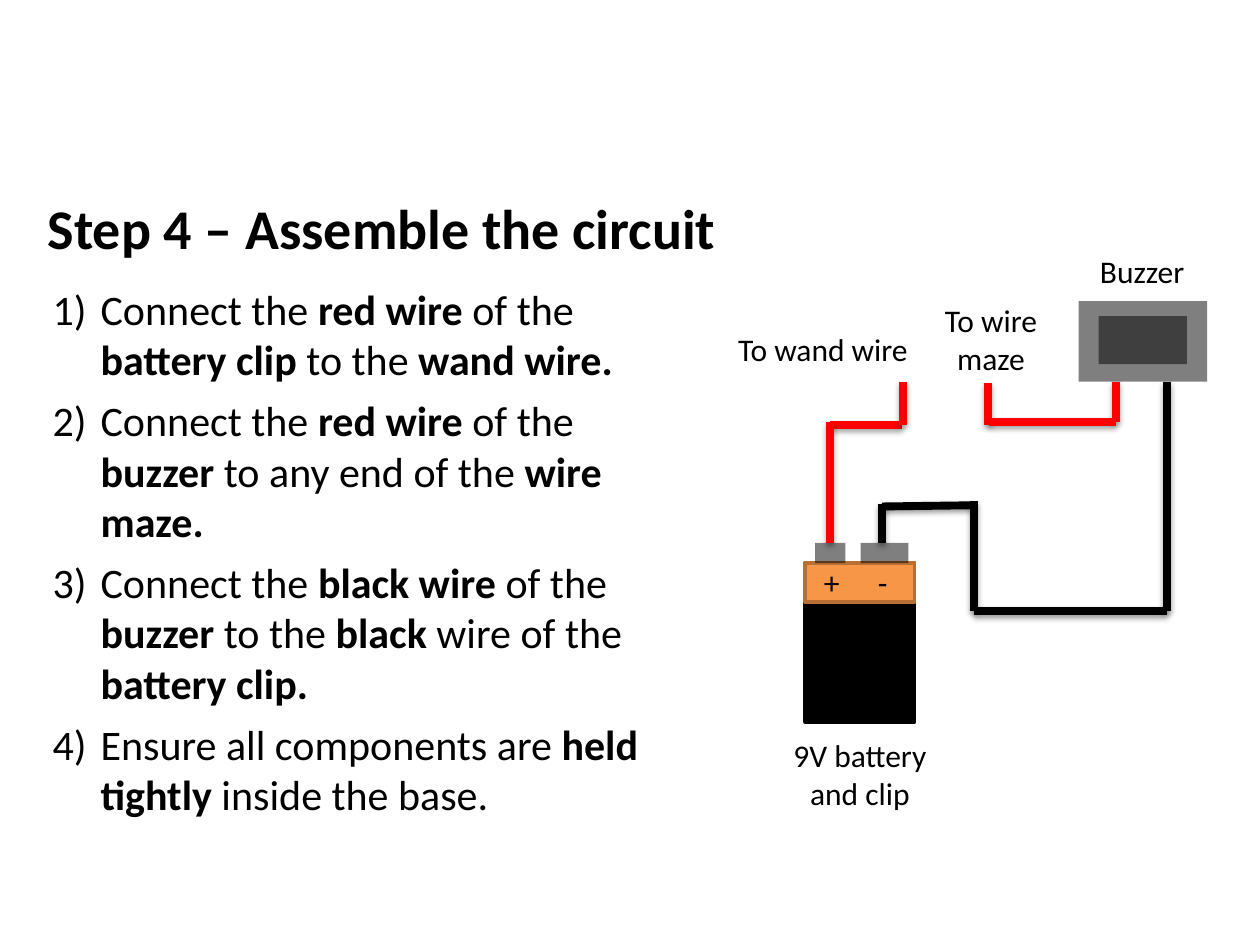
"""Build the slide that shows how to assemble the buzzer circuit."""
from lxml import etree
from pptx import Presentation
from pptx.dml.color import RGBColor
from pptx.enum.shapes import MSO_CONNECTOR, MSO_SHAPE
from pptx.enum.text import MSO_AUTO_SIZE, PP_ALIGN
from pptx.oxml import parse_xml
from pptx.oxml.ns import nsdecls, qn
from pptx.util import Inches, Pt

RECTANGLE = MSO_SHAPE.RECTANGLE
STRAIGHT = MSO_CONNECTOR.STRAIGHT
GROW = MSO_AUTO_SIZE.SHAPE_TO_FIT_TEXT
LEFT, CENTER = PP_ALIGN.LEFT, PP_ALIGN.CENTER
TOP_SIDE = 0

THEME = {
    "font": "Calibri",
    "title": 32, "step": 24, "label": 18,
    "step_gap": 6, "wire": 4.5, "edge": 2,
    "black": "000000", "red": "FF0000",
    "orange": "F79646", "orange_edge": "B76F34",
    "glass": 50000,
    "shadow_alpha": {"red": 35000, "black": 38000},
    "shadow_distance": {"red": 23000, "black": 20000},
}

deck = Presentation()
deck.slide_width, deck.slide_height = Inches(10), Inches(7.5)
slide = deck.slides.add_slide(deck.slide_layouts[6])
COLUMN = deck.slide_width / 100
ROW = deck.slide_height / 75


def place(left, top, width, height):
    return (round(left * COLUMN), round(top * ROW),
            round(width * COLUMN), round(height * ROW))


def write(paragraph, text, size, bold=False):
    run = paragraph.add_run()
    run.text = text
    run.font.name = THEME["font"]
    run.font.size = Pt(THEME[size])
    run.font.bold = bold
    run.font.color.rgb = RGBColor.from_string(THEME["black"])


heading = slide.shapes.add_textbox(*place(2.8, 14.9, 84.2, 6.4)).text_frame
heading.word_wrap = True
heading.auto_size = GROW
write(heading.paragraphs[0], "Step 4 – Assemble the circuit", "title", True)

steps = [
    "Connect the |red wire |of the |battery clip |to the |wand wire.",
    "Connect the |red wire |of the |buzzer| to any end of the |wire maze.",
    "Connect the |black wire |of the |buzzer| to the |black |wire of the |battery clip.",
    "Ensure all components are |held tightly |inside the base.",
]
instructions = slide.shapes.add_textbox(*place(3.2, 22, 51.8, 43.9)).text_frame
instructions.word_wrap = True
instructions.auto_size = GROW
for number, step in enumerate(steps):
    line = instructions.add_paragraph() if number else instructions.paragraphs[0]
    numbering = line._p.get_or_add_pPr()
    numbering.set("marL", str(round(3.8 * COLUMN)))
    numbering.set("indent", str(round(-3.8 * COLUMN)))
    etree.SubElement(numbering, qn("a:buFont"), typeface="+mj-lt")
    etree.SubElement(numbering, qn("a:buAutoNum"), type="arabicParenR")
    line.space_after = Pt(THEME["step_gap"])
    for position, words in enumerate(step.split("|")):
        write(line, words, "step", position % 2 == 1)

parts = {
    "buzzer case": (85.6, 23.9, 10.2, 6.4, "black", None),
    "buzzer face": (87.2, 25.1, 7, 3.8, "black", None),
    "battery body": (63.9, 44.7, 8.7, 12.6, "black", "black"),
    "battery top": (63.9, 44.7, 8.7, 3.1, "orange", "orange_edge"),
    "positive terminal": (64.7, 43.1, 2.4, 1.6, "black", None),
    "negative terminal": (68.3, 43.1, 3.8, 1.6, "black", None),
}
circuit = {}
for part, (left, top, width, height, fill, edge) in parts.items():
    block = slide.shapes.add_shape(RECTANGLE, *place(left, top, width, height))
    block.shadow.inherit = False
    block.fill.solid()
    block.fill.fore_color.rgb = RGBColor.from_string(THEME[fill])
    if edge:
        block.line.color.rgb = RGBColor.from_string(THEME[edge])
        block.line.width = Pt(THEME["edge"])
    else:
        block.line.fill.background()
        tint = block.fill._xPr.find(qn("a:solidFill"))[0]
        etree.SubElement(tint, qn("a:alpha"), val=str(THEME["glass"]))
    circuit[part] = block

labels = [
    ("+", 64.4, 44.2, 3.1, 4, CENTER),
    ("-", 68.5, 44.2, 3.1, 4, CENTER),
    ("9V battery and clip", 61.7, 57.9, 13.1, 7.1, CENTER),
    ("Buzzer", 84.1, 19.5, 13.1, 4, CENTER),
    ("To wand wire", 57.6, 25.7, 16.6, 4, LEFT),
    ("To wire maze", 72.7, 23.4, 11.9, 7.1, CENTER),
]
for words, left, top, width, height, alignment in labels:
    label = slide.shapes.add_textbox(*place(left, top, width, height)).text_frame
    label.word_wrap = True
    label.auto_size = GROW
    label.paragraphs[0].alignment = alignment
    write(label.paragraphs[0], words, "label")

wires = [
    ("red", 88.6, 30.3, 88.6, 33.5, None),
    ("black", 92.6, 30.3, 92.6, 48.5, None),
    ("red", 71.6, 33.7, 65.9, 33.7, None),
    ("red", 65.9, 33.5, 65.9, 43.1, "positive terminal"),
    ("black", 70, 40, 70, 43.1, None),
    ("black", 77.3, 40.1, 70, 40.2, None),
    ("black", 77.3, 39.8, 77.3, 48.5, None),
    ("black", 77.3, 48.5, 92.6, 48.5, None),
    ("red", 71.7, 30.3, 71.7, 33.7, None),
    ("red", 78.4, 30.4, 78.4, 33.7, None),
    ("red", 88.6, 33.5, 78.5, 33.5, None),
]
for color, start_x, start_y, end_x, end_y, terminal in wires:
    wire = slide.shapes.add_connector(STRAIGHT, *place(start_x, start_y, end_x, end_y))
    wire.line.color.rgb = RGBColor.from_string(THEME[color])
    wire.line.width = Pt(THEME["wire"])
    wire._element.spPr.append(parse_xml(
        f'<a:effectLst {nsdecls("a")}><a:outerShdw blurRad="40000" '
        f'dist="{THEME["shadow_distance"][color]}" dir="5400000" rotWithShape="0">'
        f'<a:srgbClr val="{THEME["black"]}">'
        f'<a:alpha val="{THEME["shadow_alpha"][color]}"/>'
        '</a:srgbClr></a:outerShdw></a:effectLst>'))
    if terminal:
        wire.end_connect(circuit[terminal], TOP_SIDE)

deck.save("out.pptx")
